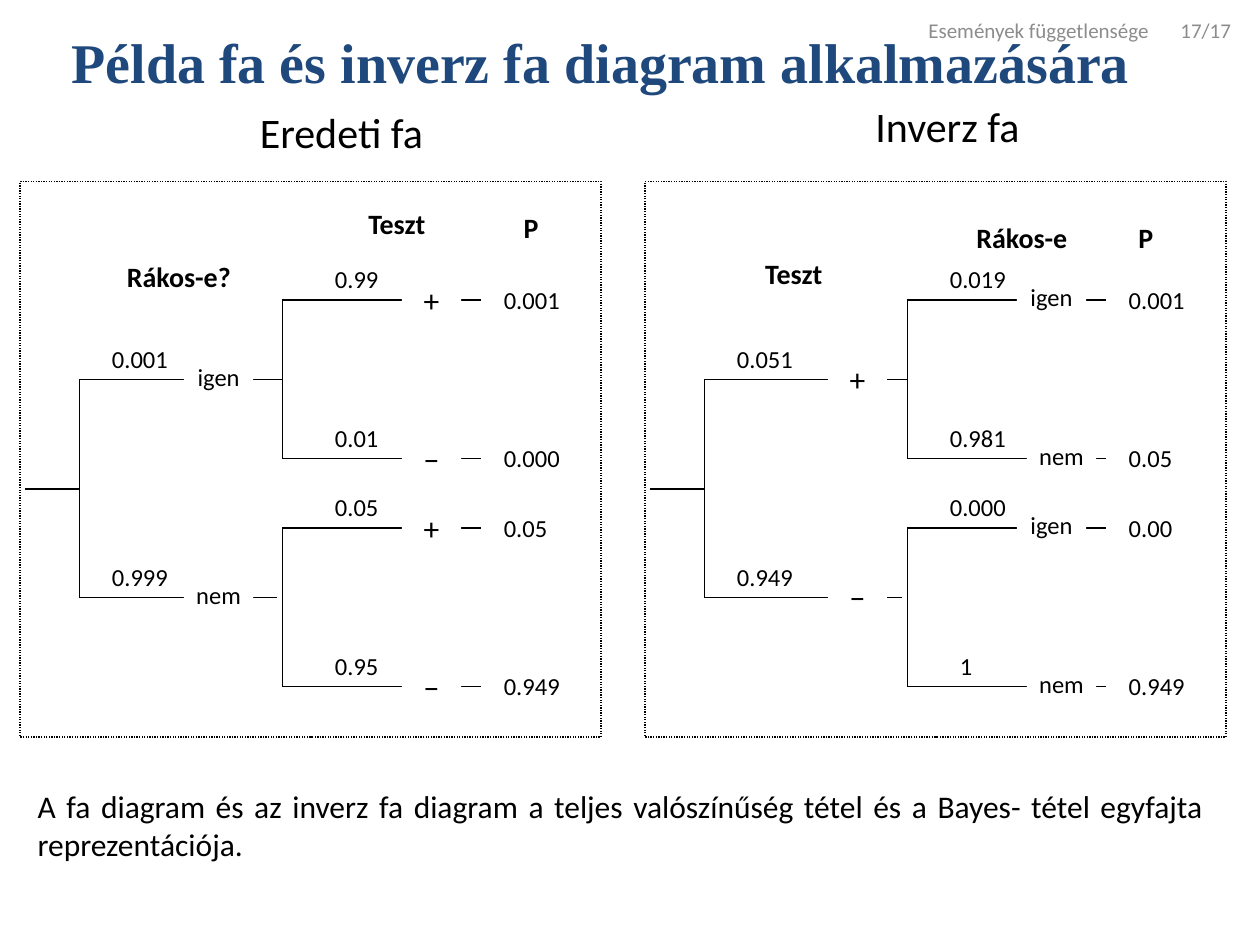
from dataclasses import dataclass

from lxml import etree
from pptx import Presentation
from pptx.dml.color import RGBColor
from pptx.enum.dml import MSO_LINE
from pptx.enum.shapes import MSO_CONNECTOR, MSO_SHAPE
from pptx.enum.text import MSO_ANCHOR, PP_ALIGN
from pptx.oxml.ns import qn
from pptx.util import Pt

PX = 9144  # 100 px to the inch
LEFT, CENTER, JUSTIFY = PP_ALIGN.LEFT, PP_ALIGN.CENTER, PP_ALIGN.JUSTIFY
TOP, MIDDLE = MSO_ANCHOR.TOP, MSO_ANCHOR.MIDDLE
STRAIGHT, RECTANGLE, DOTTED = MSO_CONNECTOR.STRAIGHT, MSO_SHAPE.RECTANGLE, MSO_LINE.ROUND_DOT


@dataclass(frozen=True)
class Theme:
    ink: str = "000000"
    paper: str = "FFFFFF"
    title: str = "1F497D"
    muted: str = "8C8C8C"
    body_font: str = "Calibri"
    title_font: str = "Times New Roman"
    title_size: int = 32
    tree_title_size: int = 24
    text_size: int = 18
    heading_size: int = 16
    value_size: int = 14
    header_size: int = 12
    line_width: float = 0.75


@dataclass(frozen=True)
class Box:
    x: int
    y: int
    w: int
    h: int

    def emu(self) -> tuple[int, ...]:
        return tuple(v * PX for v in (self.x, self.y, self.w, self.h))


@dataclass(frozen=True)
class Style:
    size: int
    color: str
    font: str
    bold: bool = False
    align: int = LEFT
    anchor: int = TOP
    insets: tuple[int, int, int, int] = (10, 5, 10, 5)


@dataclass(frozen=True)
class Branch:
    chance: str
    outcome: str
    result: str = ""
    chance_x: int = 79
    outcome_x: int = 146


@dataclass(frozen=True)
class Heading:
    text: str
    x: int
    y: int
    w: int = 118


@dataclass(frozen=True)
class Tree:
    left: int
    title: str
    title_box: Box
    headings: tuple[Heading, ...]
    stages: tuple[Branch, ...]
    leaves: tuple[Branch, ...]


THEME = Theme()
BODY = (THEME.ink, THEME.body_font)
TITLE = Style(THEME.title_size, THEME.title, THEME.title_font, True, insets=(10, 1, 10, 5))
TREE_TITLE = Style(THEME.tree_title_size, *BODY, align=CENTER)
HEADING = Style(THEME.heading_size, *BODY, True, CENTER)
VALUE = Style(THEME.value_size, *BODY)
WORD = Style(THEME.value_size, *BODY, align=CENTER, insets=(2, 1, 2, 1))
SIGN = Style(THEME.text_size, *BODY, align=CENTER, insets=(2, 1, 2, 1))
SUMMARY = Style(THEME.text_size, *BODY, align=JUSTIFY)
HEADER = Style(THEME.header_size, THEME.muted, THEME.body_font, anchor=MIDDLE)

# Columns are measured from the left edge of a tree, rows from the top of the slide.
ROOT_X, STAGE_X, LEAF_X, LEAF_END, RESULT_X = 20, 63, 224, 382, 390
ROOT_Y = 388
STAGE_ROWS = (301, 474)
LEAF_ROWS = (238, 364, 419, 545)

TREES = (
    Tree(0, "Eredeti fa", Box(161, 80, 220, 50),
         (Heading("Rákos-e?", 83, 201), Heading("Teszt", 256, 159), Heading("P", 390, 162, 63)),
         (Branch("0.001", "igen"), Branch("0.999", "nem")),
         (Branch("0.99", "+", "0.001", 256, 319), Branch("0.01", "−", "0.000", 256, 319),
          Branch("0.05", "+", "0.05", 256, 319), Branch("0.95", "−", "0.949", 256, 319))),
    Tree(496, "Inverz fa", Box(642, 75, 220, 50),
         (Heading("Teszt", 75, 199), Heading("Rákos-e", 256, 170), Heading("P", 382, 170, 63)),
         (Branch("0.051", "+", outcome_x=161), Branch("0.949", "−", outcome_x=161)),
         (Branch("0.019", "igen", "0.001", 248, 311), Branch("0.981", "nem", "0.05", 248, 319),
          Branch("0.000", "igen", "0.00", 248, 311), Branch("1", "nem", "0.949", 256, 319))),
)


def write(shape, text: str, style: Style):
    """Fill the shape with one styled paragraph and return that paragraph."""
    frame = shape.text_frame
    sides = ("margin_left", "margin_top", "margin_right", "margin_bottom")
    frame_format = {side: inset * PX for side, inset in zip(sides, style.insets)}
    frame_format |= {"word_wrap": True, "vertical_anchor": style.anchor}
    for name, value in frame_format.items():
        setattr(frame, name, value)
    paragraph = frame.paragraphs[0]
    paragraph.alignment = style.align
    run = paragraph.add_run()
    run.text = text
    font_format = {"size": Pt(style.size), "name": style.font, "bold": style.bold}
    for name, value in font_format.items():
        setattr(run.font, name, value)
    run.font.color.rgb = RGBColor.from_string(style.color)
    return paragraph


def add_text(shapes, box: Box, text: str, style: Style):
    return write(shapes.add_textbox(*box.emu()), text, style)


def add_line(shapes, x1: int, y1: int, x2: int, y2: int) -> None:
    line = shapes.add_connector(STRAIGHT, *(v * PX for v in (x1, y1, x2, y2)))
    line.line.color.rgb = RGBColor.from_string(THEME.ink)
    line.line.width = Pt(THEME.line_width)
    etree.SubElement(line._element.spPr, qn("a:effectLst"))


def add_outcome(shapes, x: int, row: int, text: str) -> None:
    """Set an outcome on its branch, with a plain ground that interrupts the line."""
    box, style = ((Box(x, row - 16, 47, 32), SIGN) if text in "+−"
                  else (Box(x, row - 15, 55, 26), WORD))
    label = shapes.add_shape(RECTANGLE, *box.emu())
    label.shadow.inherit = False
    label.fill.solid()
    label.fill.fore_color.rgb = RGBColor.from_string(THEME.paper)
    label.line.fill.background()
    write(label, text, style)


def add_branch(shapes, left: int, start: int, end: int, row: int, branch: Branch) -> None:
    add_line(shapes, left + start, row, left + end, row)
    add_text(shapes, Box(left + branch.chance_x, row - 33, 79, 33), branch.chance, VALUE)
    add_outcome(shapes, left + branch.outcome_x, row, branch.outcome)
    if branch.result:
        add_text(shapes, Box(left + RESULT_X, row - 17, 79, 33), branch.result, VALUE)


def add_frame(shapes, box: Box) -> None:
    frame = shapes.add_shape(RECTANGLE, *box.emu())
    frame.shadow.inherit = False
    frame.fill.background()
    frame.line.color.rgb = RGBColor.from_string(THEME.ink)
    frame.line.width = Pt(THEME.line_width)
    frame.line.dash_style = DOTTED


def add_tree(shapes, tree: Tree) -> None:
    left = tree.left
    add_text(shapes, tree.title_box, tree.title, TREE_TITLE)
    add_line(shapes, left + ROOT_X, ROOT_Y, left + STAGE_X, ROOT_Y)
    for x, rows in ((STAGE_X, STAGE_ROWS), (LEAF_X, LEAF_ROWS[:2]), (LEAF_X, LEAF_ROWS[2:])):
        add_line(shapes, left + x, rows[0], left + x, rows[1])
    for row, end, stage in zip(STAGE_ROWS, (LEAF_X, LEAF_X - 4), tree.stages):
        add_branch(shapes, left, STAGE_X, end, row, stage)
    for row, leaf in zip(LEAF_ROWS, tree.leaves):
        add_branch(shapes, left, LEAF_X, LEAF_END, row, leaf)
    for heading in tree.headings:
        add_text(shapes, Box(left + heading.x, heading.y, heading.w, 37), heading.text, HEADING)
    add_frame(shapes, Box(left + 16, 144, 461, 441))


def add_header(shapes, topic: str, page: str) -> None:
    """Put the topic and the page number on one line, the number at a right tab."""
    paragraph = add_text(shapes, Box(716, 4, 281, 40), f"{topic}\t{page}", HEADER)
    properties = paragraph._p.get_or_add_pPr()
    properties.set("marL", str(11 * PX))
    properties.set("indent", "0")
    stops = etree.SubElement(properties, qn("a:tabLst"))
    etree.SubElement(stops, qn("a:tab"), pos=str(260 * PX), algn="r")


def main() -> None:
    deck = Presentation()
    deck.slide_width, deck.slide_height = 1000 * PX, 750 * PX
    shapes = deck.slides.add_slide(deck.slide_layouts[6]).shapes
    add_text(shapes, Box(47, 21, 881, 59), "Példa fa és inverz fa diagram alkalmazására", TITLE)
    for tree in TREES:
        add_tree(shapes, tree)
    add_text(shapes, Box(20, 620, 945, 70),
             "A fa diagram és az inverz fa diagram a teljes valószínűség tétel "
             "és a Bayes- tétel egyfajta reprezentációja.", SUMMARY)
    add_header(shapes, "Események függetlensége", "17/17")
    deck.save("out.pptx")


if __name__ == "__main__":
    main()
